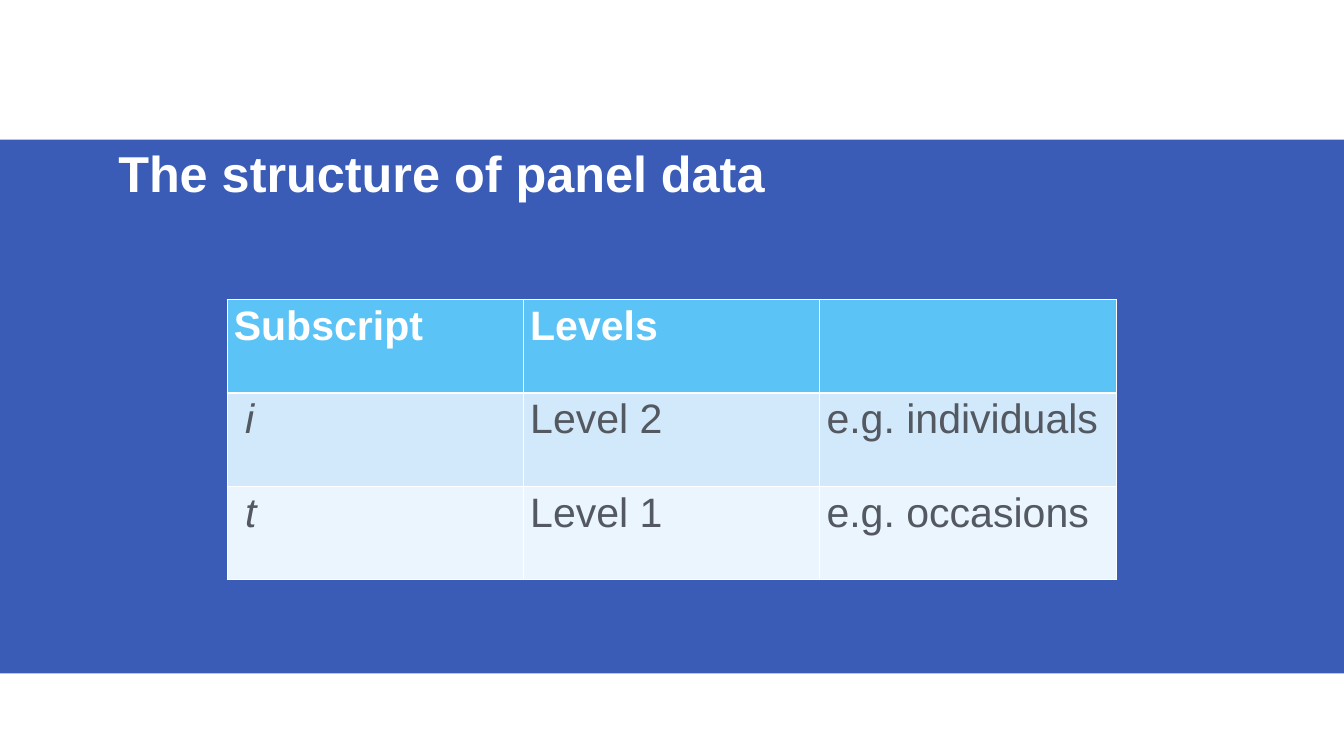
from lxml import etree
from pptx import Presentation
from pptx.dml.color import RGBColor
from pptx.enum.shapes import MSO_SHAPE
from pptx.enum.text import MSO_ANCHOR, MSO_AUTO_SIZE, PP_ALIGN
from pptx.oxml.ns import qn
from pptx.util import Inches, Pt

RECT = MSO_SHAPE.RECTANGLE
TOP = MSO_ANCHOR.TOP
NO_FIT = MSO_AUTO_SIZE.NONE
LEFT = PP_ALIGN.LEFT

TITLE = "The structure of panel data"
ROWS = [
    ("Subscript", "Levels", ""),
    (" i", "Level 2", "e.g. individuals"),
    (" t", "Level 1", "e.g. occasions"),
]
FILLS = ["5BC3F5", "D2E9FB", "EAF5FD"]
WHITE, GREY, BLUE = "FFFFFF", "545860", "3A5CB7"
COL_W, ROW_H = 4.41, 1.39


def paint(fill, color):
    fill.solid()
    fill.fore_color.rgb = RGBColor.from_string(color)


def style(para, size, color, bold=False, italic=False):
    para.alignment = LEFT
    font = para.font
    font.name, font.size = "Arial", Pt(size)
    font.bold, font.italic = bold, italic
    font.color.rgb = RGBColor.from_string(color)


def edge(cell, sides):
    """Draw white cell borders; sides maps a tag to a width in points."""
    props = cell._tc.get_or_add_tcPr()
    for i, (tag, width) in enumerate(sides.items()):
        line = etree.Element(qn(f"a:{tag}"), w=str(Pt(width)))
        solid = etree.SubElement(line, qn("a:solidFill"))
        etree.SubElement(solid, qn("a:srgbClr"), val=WHITE)
        props.insert(i, line)


def add_band(slide):
    band = slide.shapes.add_shape(RECT, 0, Inches(2.08), Inches(20), Inches(7.94))
    band.shadow.inherit = False
    paint(band.fill, BLUE)
    band.line.fill.background()
    slide.shapes._spTree.insert(2, band._element)  # behind the title


def add_title(slide):
    title = slide.shapes.title
    title.left, title.top = Inches(1.66), Inches(2.17)
    title.width, title.height = Inches(11.74), Inches(2.53)
    frame = title.text_frame
    frame.text = TITLE
    frame.auto_size, frame.vertical_anchor = NO_FIT, TOP
    para = frame.paragraphs[0]
    para.line_spacing = 0.9
    style(para, 54, WHITE, bold=True)


def add_levels(slide):
    rows, cols = len(ROWS), len(ROWS[0])
    table = slide.shapes.add_table(
        rows, cols, Inches(3.38), Inches(4.46),
        Inches(cols * COL_W), Inches(rows * ROW_H)).table
    for col in table.columns:
        col.width = Inches(COL_W)
    for r, (texts, color) in enumerate(zip(ROWS, FILLS)):
        table.rows[r].height = Inches(ROW_H)
        head = r == 0
        for c, text in enumerate(texts):
            cell = table.cell(r, c)
            cell.text = text
            style(cell.text_frame.paragraphs[0], 44, WHITE if head else GREY,
                  bold=head, italic=not head and c == 0)
            paint(cell.fill, color)
            edge(cell, {"lnL": 1, "lnR": 1, "lnT": 3 if r == 1 else 1,
                        "lnB": 3 if head else 1})


def main():
    prs = Presentation()
    prs.slide_width, prs.slide_height = Inches(20), Inches(11.25)
    slide = prs.slides.add_slide(prs.slide_layouts[5])
    paint(slide.background.fill, WHITE)
    add_band(slide)
    add_title(slide)
    add_levels(slide)
    prs.save("out.pptx")


if __name__ == "__main__":
    main()
